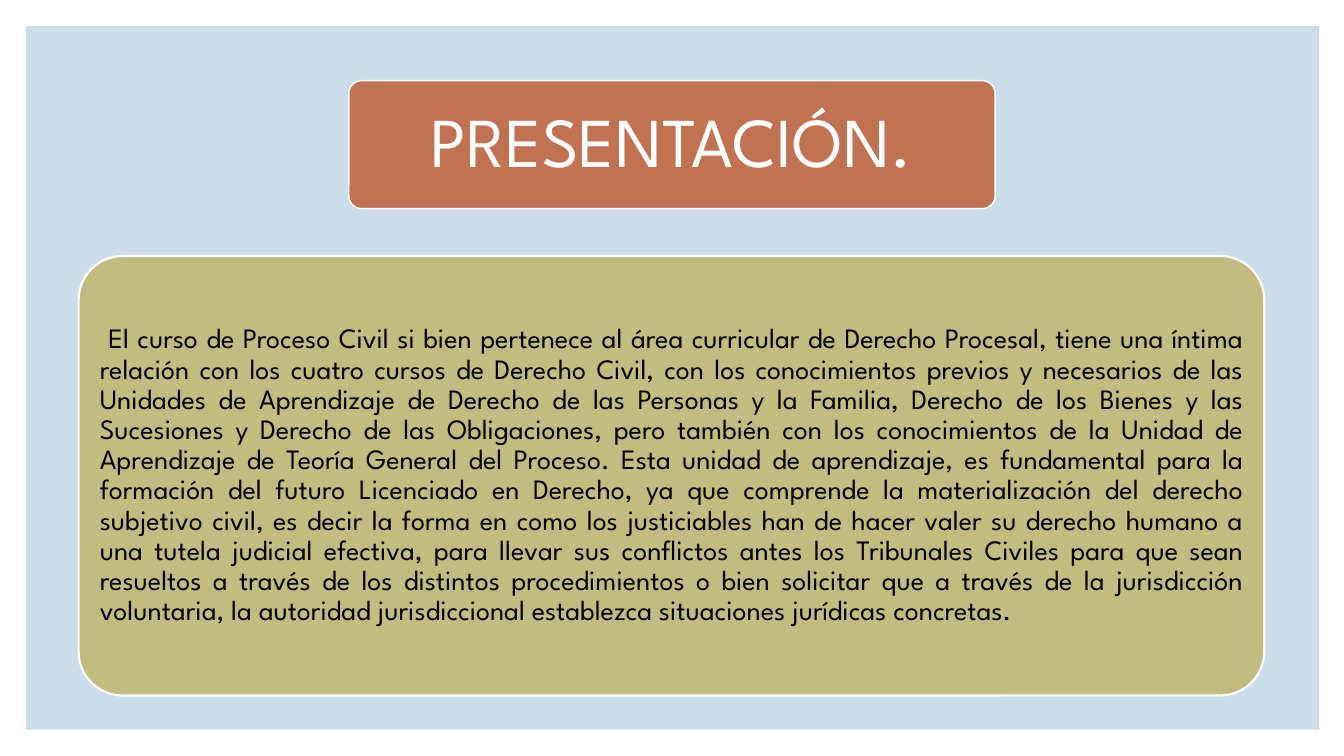
from lxml import etree
from pptx import Presentation
from pptx.dml.color import RGBColor
from pptx.enum.shapes import MSO_SHAPE
from pptx.enum.text import MSO_ANCHOR, MSO_AUTO_SIZE, PP_ALIGN
from pptx.oxml.ns import qn
from pptx.util import Inches, Pt

FONT = "League Spartan"
HEADING = "PRESENTACIÓN."
COURSE_SENTENCES = [
    " El curso de Proceso Civil si bien pertenece al área curricular de Derecho Procesal, "
    "tiene una íntima relación con los cuatro cursos de Derecho Civil, con los conocimientos "
    "previos y necesarios de las Unidades de Aprendizaje de Derecho de las Personas y la "
    "Familia, Derecho de los Bienes y las Sucesiones y Derecho de las Obligaciones, pero "
    "también con los conocimientos de la Unidad de Aprendizaje de Teoría General del Proceso.",
    "Esta unidad de aprendizaje, es fundamental para la formación del futuro Licenciado en "
    "Derecho, ya que comprende la materialización del derecho subjetivo civil, es decir la "
    "forma en como los justiciables han de hacer valer su derecho humano a una tutela judicial "
    "efectiva, para llevar sus conflictos antes los Tribunales Civiles para que sean resueltos "
    "a través de los distintos procedimientos o bien solicitar que a través de la jurisdicción "
    "voluntaria, la autoridad jurisdiccional establezca situaciones jurídicas concretas.",
]


def paint(color_format, color):
    """Set a fill, line or font colour from a hex string."""
    color_format.rgb = RGBColor.from_string(color)


def add_panel(slide, kind, box, fill, outline=None, opacity=100):
    """Add a filled panel with an optional white outline."""
    panel = slide.shapes.add_shape(kind, *map(Inches, box))
    panel.shadow.inherit = False
    panel.fill.solid()
    paint(panel.fill.fore_color, fill)
    if opacity < 100:
        color = panel._element.spPr.find(qn("a:solidFill"))[0]
        etree.SubElement(color, qn("a:alpha"), val=str(opacity * 1000))
    if outline:
        paint(panel.line.color, "FFFFFF")
        panel.line.width = Pt(outline)
    else:
        panel.line.fill.background()
    if kind == MSO_SHAPE.ROUNDED_RECTANGLE:
        panel.adjustments[0] = 0.1


def write_text(slide, placeholder, box, text, size, color, align, inset):
    """Place a placeholder on top of the panels and fill it with one paragraph."""
    slide.shapes._spTree.append(placeholder._element)
    placeholder.left, placeholder.top, placeholder.width, placeholder.height = map(Inches, box)
    frame = placeholder.text_frame
    frame.word_wrap = True
    frame.auto_size = MSO_AUTO_SIZE.NONE
    frame.vertical_anchor = MSO_ANCHOR.MIDDLE
    frame.margin_left = frame.margin_right = Inches(inset)
    frame.margin_top = frame.margin_bottom = Inches(inset)
    paragraph = frame.paragraphs[0]
    paragraph.alignment = align
    paragraph.line_spacing = 0.9
    paragraph.space_before = Pt(0)
    properties = paragraph._p.get_or_add_pPr()
    properties.set("marL", "0")
    properties.set("indent", "0")
    etree.SubElement(properties, qn("a:buNone"))
    run = paragraph.add_run()
    run.text = text
    run.font.name = FONT
    run.font.size = Pt(size)
    paint(run.font.color, color)


def main():
    """Build the course presentation slide."""
    deck = Presentation()
    deck.slide_width, deck.slide_height = Inches(13.33), Inches(7.5)
    slide = deck.slides.add_slide(deck.slide_layouts[1])
    heading, summary = slide.placeholders

    add_panel(slide, MSO_SHAPE.RECTANGLE, (0.26, 0.26, 12.82, 6.98), "CCDDEA")
    add_panel(slide, MSO_SHAPE.ROUNDED_RECTANGLE, (3.46, 0.8, 6.41, 1.27), "BD582C", 1, 80)
    add_panel(slide, MSO_SHAPE.ROUNDED_RECTANGLE, (0.78, 2.54, 11.76, 4.36), "C2BC80", 1.5)

    write_text(slide, heading, (3.49, 0.84, 6.34, 1.19), HEADING, 50, "FFFFFF",
               PP_ALIGN.CENTER, 0.21)
    write_text(slide, summary, (0.91, 2.67, 11.51, 4.1), " ".join(COURSE_SENTENCES), 20,
               "000000", PP_ALIGN.JUSTIFY, 0.08)
    deck.save("out.pptx")


if __name__ == "__main__":
    main()
